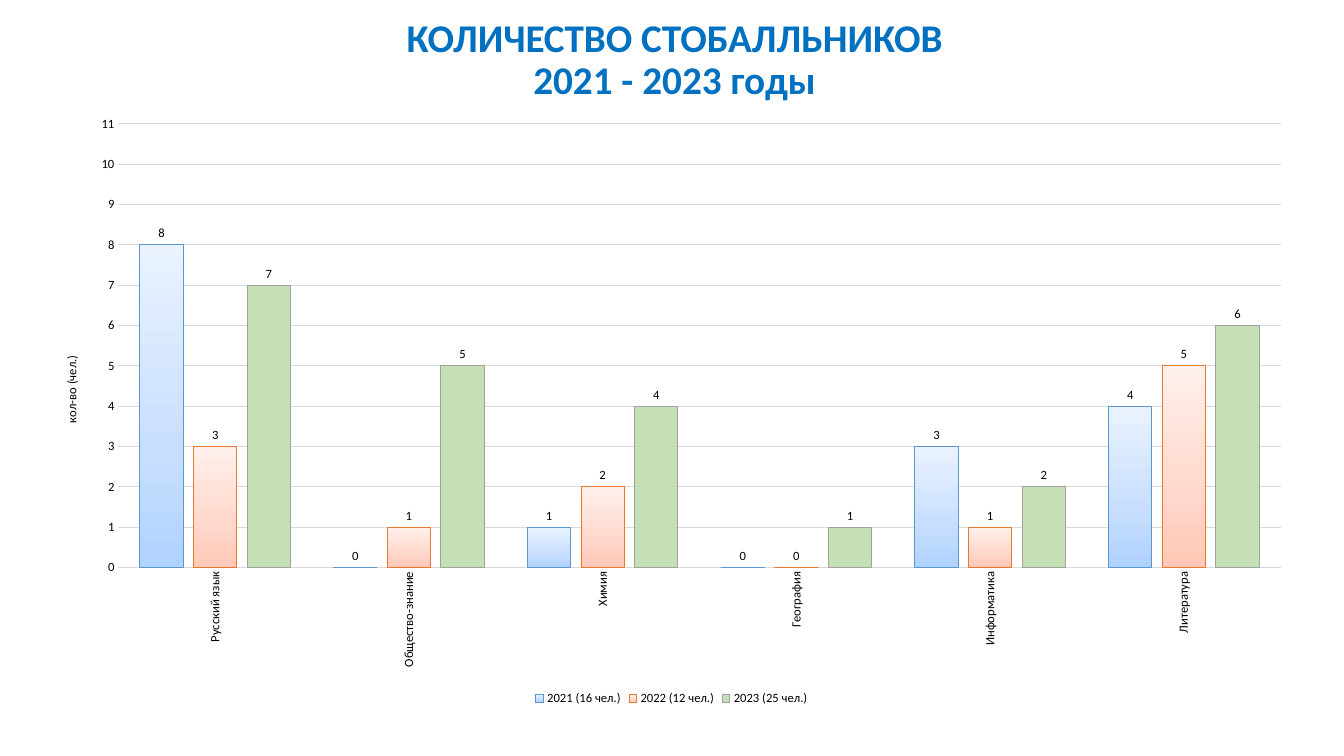
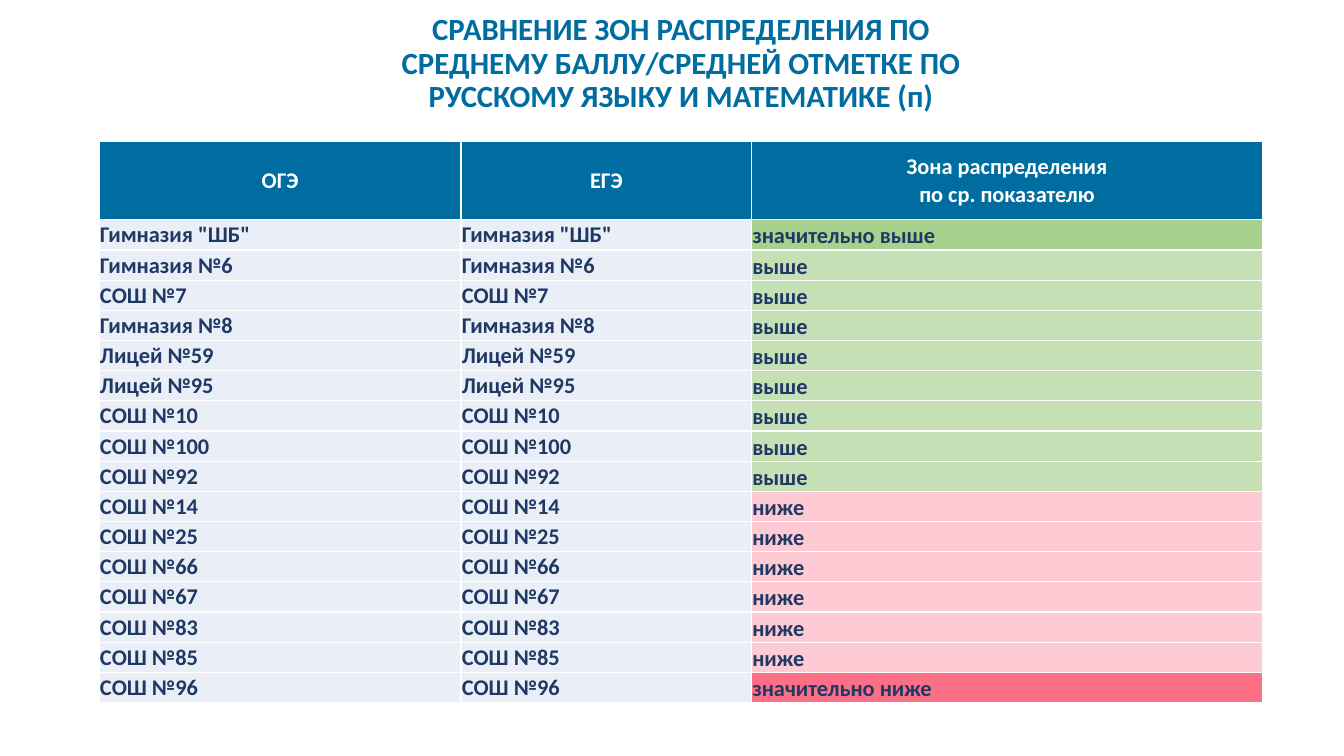
from lxml.etree import SubElement
from pptx import Presentation
from pptx.chart.data import CategoryChartData
from pptx.dml.color import RGBColor
from pptx.enum.chart import XL_CHART_TYPE, XL_LABEL_POSITION, XL_LEGEND_POSITION, XL_TICK_MARK
from pptx.enum.text import MSO_ANCHOR, PP_ALIGN
from pptx.oxml import parse_xml
from pptx.oxml.ns import nsdecls, qn
from pptx.util import Cm, Pt

FONT = "Calibri"
COLORS = {
    "black": "000000",
    "white": "FFFFFF",
    "title_blue": "0070C0",
    "header_blue": "006DA1",
    "table_text": "203864",
    "school": "EAEFF7",
    "grid": "D9D9D9",
    "much_higher": "A9D18E",
    "higher": "C5E0B4",
    "lower": "FECAD3",
    "much_lower": "FC7087",
    "line_2021": "5998D0",
    "line_2022": "E87A30",
    "line_2023": "A1A1A1",
}
BLUE_GRADIENT = [(0, "B0D2FF"), (35, "C7DEFF"), (100, "EAF2FF")]
ORANGE_GRADIENT = [(0, "FFC7B6"), (35, "FFD7CB"), (100, "FFF0EB")]

SUBJECTS = ["Русский язык", "Общество-знание", "Химия", "География", "Информатика", "Литература"]
YEARS = [
    ("2021 (16 чел.)", [8, 0, 1, 0, 3, 4], BLUE_GRADIENT, "line_2021"),
    ("2022 (12 чел.)", [3, 1, 2, 0, 1, 5], ORANGE_GRADIENT, "line_2022"),
    ("2023 (25 чел.)", [7, 5, 4, 1, 2, 6], None, "line_2023"),
]
HEADERS = [["ОГЭ"], ["ЕГЭ"], ["Зона распределения", "по ср. показателю"]]
ZONES = [
    ("значительно выше", "much_higher", ['Гимназия "ШБ"']),
    ("выше", "higher", ["Гимназия №6", "СОШ №7", "Гимназия №8", "Лицей №59",
                        "Лицей №95", "СОШ №10", "СОШ №100", "СОШ №92"]),
    ("ниже", "lower", ["СОШ №14", "СОШ №25", "СОШ №66", "СОШ №67", "СОШ №83", "СОШ №85"]),
    ("значительно ниже", "much_lower", ["СОШ №96"]),
]


def rgb(name):
    return RGBColor.from_string(COLORS[name])


def style_font(font, size, color, bold=False):
    font.name = FONT
    font.size = Pt(size)
    font.bold = bold
    font.color.rgb = rgb(color)


def add_run(paragraph, text, size, color, bold=True):
    run = paragraph.add_run()
    run.text = text
    style_font(run.font, size, color, bold)


def add_title(slide, lines, left, top, width, height, size, color):
    frame = slide.shapes.add_textbox(Cm(left), Cm(top), Cm(width), Cm(height)).text_frame
    frame.word_wrap = True
    frame.vertical_anchor = MSO_ANCHOR.BOTTOM
    paragraph = frame.paragraphs[0]
    paragraph.alignment = PP_ALIGN.CENTER
    paragraph.line_spacing = 0.9
    for index, line in enumerate(lines):
        if index:
            paragraph.add_line_break()
        add_run(paragraph, line, size, color)


def place_chart_part(element, index, **fractions):
    for layout in element.findall(qn("c:layout")):
        element.remove(layout)
    layout = parse_xml(f"<c:layout {nsdecls('c')}><c:manualLayout/></c:layout>")
    manual = layout[0]
    if "w" in fractions:
        SubElement(manual, qn("c:layoutTarget")).set("val", "inner")
    for mode in ("xMode", "yMode"):
        SubElement(manual, qn(f"c:{mode}")).set("val", "edge")
    for key, fraction in fractions.items():
        SubElement(manual, qn(f"c:{key}")).set("val", str(fraction))
    element.insert(index, layout)


def turn_upward(body):
    body.set("rot", "-5400000")
    body.set("vert", "horz")


def fill_gradient(series, stops):
    stop_xml = "".join(
        f'<a:gs pos="{position * 1000}"><a:srgbClr val="{color}"/></a:gs>' for position, color in stops
    )
    series._element.get_or_add_spPr().insert(0, parse_xml(
        f'<a:gradFill {nsdecls("a")} rotWithShape="1"><a:gsLst>{stop_xml}</a:gsLst>'
        '<a:lin ang="16200000" scaled="0"/></a:gradFill>'
    ))


def style_series(series, gradient, line_color):
    series.invert_if_negative = False
    if gradient:
        fill_gradient(series, gradient)
    else:
        series.format.fill.solid()
        series.format.fill.fore_color.rgb = rgb("higher")
    series.format.line.color.rgb = rgb(line_color)
    series.format.line.width = Pt(0.75)
    labels = series.data_labels
    labels.show_value = True
    labels.position = XL_LABEL_POSITION.OUTSIDE_END
    style_font(labels.font, 9, "black")


def style_axes(chart):
    category_axis, value_axis = chart.category_axis, chart.value_axis
    for axis in (category_axis, value_axis):
        axis.major_tick_mark = axis.minor_tick_mark = XL_TICK_MARK.NONE
        style_font(axis.tick_labels.font, 9, "black")
    turn_upward(category_axis._element.find(qn("c:txPr")).find(qn("a:bodyPr")))
    value_axis.minimum_scale = 0
    value_axis.maximum_scale = 11
    value_axis.major_unit = 1
    value_axis.has_major_gridlines = True
    value_axis.format.line.fill.background()
    for line in (category_axis.format.line, value_axis.major_gridlines.format.line):
        line.color.rgb = rgb("grid")
        line.width = Pt(0.75)
    frame = value_axis.axis_title.text_frame
    add_run(frame.paragraphs[0], "кол-во (чел.)", 9, "black", False)
    turn_upward(frame._txBody.find(qn("a:bodyPr")))
    place_chart_part(value_axis._element.find(qn("c:title")), 1, x=0.02, y=0.41)


def add_column_chart(slide, left, top, width, height):
    data = CategoryChartData(number_format="General")
    data.categories = SUBJECTS
    for name, values, _, _ in YEARS:
        data.add_series(name, values)
    chart = slide.shapes.add_chart(
        XL_CHART_TYPE.COLUMN_CLUSTERED, Cm(left), Cm(top), Cm(width), Cm(height), data
    ).chart
    style_font(chart.font, 10, "black")
    chart.has_title = False
    chart.has_legend = True
    chart.legend.position = XL_LEGEND_POSITION.BOTTOM
    chart.legend.include_in_layout = False
    style_font(chart.legend.font, 9, "black")
    plot = chart.plots[0]
    plot.vary_by_categories = False
    plot.gap_width = 100
    plot.overlap = -24
    for series, (_, _, gradient, line_color) in zip(plot.series, YEARS):
        style_series(series, gradient, line_color)
    style_axes(chart)
    plot_area = chart._chartSpace.find(qn("c:chart")).find(qn("c:plotArea"))
    place_chart_part(plot_area, 0, x=0.065, y=0.031, w=0.914, h=0.734)


def add_borders(cell):
    properties = cell._tc.get_or_add_tcPr()
    for index, side in enumerate("LRTB"):
        properties.insert(index, parse_xml(
            f'<a:ln{side} {nsdecls("a")} w="12700"><a:solidFill>'
            f'<a:srgbClr val="{COLORS["white"]}"/></a:solidFill></a:ln{side}>'
        ))


def fill_cell(cell, lines, fill, color, alignment, anchor):
    cell.fill.solid()
    cell.fill.fore_color.rgb = rgb(fill)
    add_borders(cell)
    cell.margin_left = cell.margin_right = cell.margin_top = Cm(0.02)
    cell.margin_bottom = Cm(0)
    cell.vertical_anchor = anchor
    frame = cell.text_frame
    for index, line in enumerate(lines):
        paragraph = frame.add_paragraph() if index else frame.paragraphs[0]
        paragraph.alignment = alignment
        add_run(paragraph, line, 16, color)


def add_zone_table(slide, left, top, column_widths, header_height, row_height):
    rows = [(school, zone, fill) for zone, fill, schools in ZONES for school in schools]
    table = slide.shapes.add_table(
        len(rows) + 1, len(HEADERS), Cm(left), Cm(top),
        Cm(sum(column_widths)), Cm(header_height + row_height * len(rows)),
    ).table
    for column, width in zip(table.columns, column_widths):
        column.width = Cm(width)
    for index, row in enumerate(table.rows):
        row.height = Cm(row_height if index else header_height)
    for column, lines in enumerate(HEADERS):
        fill_cell(table.cell(0, column), lines, "header_blue", "white",
                  PP_ALIGN.CENTER, MSO_ANCHOR.MIDDLE)
    for row, (school, zone, fill) in enumerate(rows, 1):
        for column in (0, 1):
            fill_cell(table.cell(row, column), [school], "school", "table_text",
                      PP_ALIGN.LEFT, MSO_ANCHOR.MIDDLE)
        fill_cell(table.cell(row, 2), [zone], fill, "table_text", PP_ALIGN.LEFT, MSO_ANCHOR.BOTTOM)


def main():
    presentation = Presentation()
    presentation.slide_width = Cm(33.87)
    presentation.slide_height = Cm(19.05)
    blank = presentation.slide_layouts[6]

    slide = presentation.slides.add_slide(blank)
    add_title(slide, ["КОЛИЧЕСТВО СТОБАЛЛЬНИКОВ", "2021 - 2023 годы"],
              9, 0.15, 16, 2.57, 28, "title_blue")
    add_column_chart(slide, 0.9, 2.65, 32.05, 15.24)

    slide = presentation.slides.add_slide(blank)
    add_title(slide, ["СРАВНЕНИЕ ЗОН РАСПРЕДЕЛЕНИЯ ПО СРЕДНЕМУ БАЛЛУ/СРЕДНЕЙ ОТМЕТКЕ ПО "
                      "РУССКОМУ ЯЗЫКУ И МАТЕМАТИКЕ (п)"],
              9.02, 0, 16.28, 3, 22, "header_blue")
    add_zone_table(slide, 2.5, 3.56, [9.12, 7.32, 12.88], 1.98, 0.76)

    presentation.save("out.pptx")


if __name__ == "__main__":
    main()
